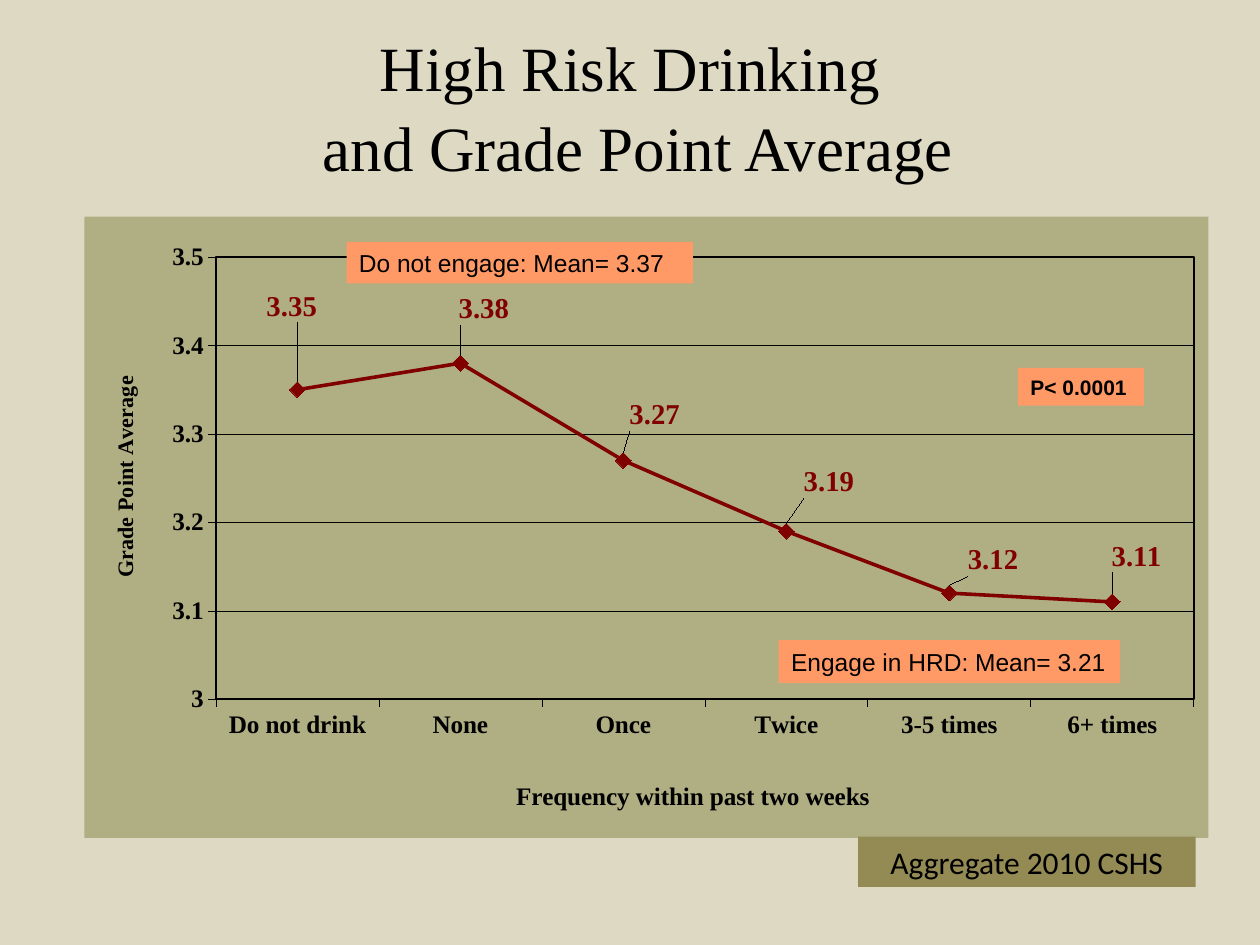
import pptx
import pptx.chart.data
import pptx.dml.color
import pptx.enum.chart
import pptx.enum.text
import pptx.oxml
import pptx.util
from pptx.util import Inches

SERIF = "Times New Roman"
BLACK = "000000"
MAROON = "800000"
ORANGE = "FF9966"
CHART_NS = 'xmlns:c="http://schemas.openxmlformats.org/drawingml/2006/chart"'
DRAWING_NS = 'xmlns:a="http://schemas.openxmlformats.org/drawingml/2006/main"'

# Category, grade point average, label shift as a share of the chart size
POINTS = [
    ("Do not drink", 3.35, (-0.005, -0.087)),
    ("None", 3.38, (0.021, -0.04)),
    ("Once", 3.27, (0.028, -0.026)),
    ("Twice", 3.19, (0.038, -0.032)),
    ("3-5 times", 3.12, (0.039, -0.006)),
    ("6+ times", 3.11, (0.022, -0.026)),
]


def color(value):
    return pptx.dml.color.RGBColor.from_string(value)


def style_font(font, name, size, value=BLACK, bold=False):
    font.name = name
    font.size = pptx.util.Pt(size)
    font.bold = bold
    font.color.rgb = color(value)


def style_fill(fill, value):
    fill.solid()
    fill.fore_color.rgb = color(value)


def style_line(line, value, width):
    line.color.rgb = color(value)
    line.width = pptx.util.Pt(width)


def manual_layout(x, y, width=None, height=None):
    """Return a c:layout element; with a size it places the inner plot area."""
    has_size = width is not None
    target = '<c:layoutTarget val="inner"/>' if has_size else ""
    modes = '<c:xMode val="edge"/><c:yMode val="edge"/>'
    size = f'<c:w val="{width}"/><c:h val="{height}"/>' if has_size else ""
    return pptx.oxml.parse_xml(
        f"<c:layout {CHART_NS}><c:manualLayout>{target}{modes}"
        f'<c:x val="{x}"/><c:y val="{y}"/>{size}</c:manualLayout></c:layout>'
    )


def label_xml(index, shift):
    x, y = shift
    return pptx.oxml.parse_xml(
        f'<c:dLbl {CHART_NS}><c:idx val="{index}"/><c:layout><c:manualLayout>'
        f'<c:x val="{x}"/><c:y val="{y}"/></c:manualLayout></c:layout>'
        '<c:dLblPos val="t"/><c:showLegendKey val="0"/><c:showVal val="1"/>'
        '<c:showCatName val="0"/><c:showSerName val="0"/>'
        '<c:showPercent val="0"/><c:showBubbleSize val="0"/></c:dLbl>'
    )


def add_title(slide, text):
    box = slide.shapes.add_textbox(Inches(0.5), Inches(0.08), Inches(9), Inches(1.5))
    frame = box.text_frame
    frame.word_wrap = True
    frame.vertical_anchor = pptx.enum.text.MSO_ANCHOR.MIDDLE
    frame.text = text
    paragraph = frame.paragraphs[0]
    paragraph.alignment = pptx.enum.text.PP_ALIGN.CENTER
    paragraph.line_spacing = 1.05
    for run in paragraph.runs:
        style_font(run.font, SERIF, 36)


def add_note(slide, text, box, fill=ORANGE, font="Arial", size=14, bold=False,
             wrap=True, alignment=pptx.enum.text.PP_ALIGN.LEFT):
    shape = slide.shapes.add_textbox(*[Inches(length) for length in box])
    style_fill(shape.fill, fill)
    frame = shape.text_frame
    frame.word_wrap = wrap
    frame.vertical_anchor = pptx.enum.text.MSO_ANCHOR.MIDDLE
    frame.text = text
    frame.paragraphs[0].alignment = alignment
    style_font(frame.paragraphs[0].runs[0].font, font, size, bold=bold)


def style_axis(axis, title, title_size, x, y):
    axis.major_tick_mark = pptx.enum.chart.XL_TICK_MARK.OUTSIDE
    axis.minor_tick_mark = pptx.enum.chart.XL_TICK_MARK.NONE
    style_font(axis.tick_labels.font, SERIF, 14.4, bold=True)
    style_line(axis.format.line, BLACK, 0.25)
    frame = axis.axis_title.text_frame
    frame.text = title
    style_font(frame.paragraphs[0].runs[0].font, SERIF, title_size, bold=True)
    title_element = axis.axis_title._element
    for layout in title_element.findall(pptx.oxml.ns.qn("c:layout")):
        title_element.remove(layout)
    title_element.find(pptx.oxml.ns.qn("c:tx")).addnext(manual_layout(x, y))


def style_areas(chart):
    """Fill the chart, frame the plot and fix the plot's place."""
    chart_space = chart._chartSpace
    plot_area = chart_space.chart.plotArea
    for layout in plot_area.findall(pptx.oxml.ns.qn("c:layout")):
        plot_area.remove(layout)
    plot_area.insert(0, manual_layout(0.117, 0.065, 0.87, 0.712))
    plot_area.append(pptx.oxml.parse_xml(
        f"<c:spPr {CHART_NS} {DRAWING_NS}><a:noFill/><a:ln w=\"12700\"><a:solidFill>"
        f'<a:srgbClr val="{BLACK}"/></a:solidFill></a:ln></c:spPr>'
    ))
    chart_space.chart.addnext(pptx.oxml.parse_xml(
        f"<c:spPr {CHART_NS} {DRAWING_NS}><a:solidFill>"
        '<a:srgbClr val="B0AE83"/></a:solidFill><a:ln><a:noFill/></a:ln></c:spPr>'
    ))


def style_series(series):
    series.smooth = False
    style_line(series.format.line, MAROON, 2.05)
    series.marker.style = pptx.enum.chart.XL_MARKER_STYLE.DIAMOND
    series.marker.size = 9
    style_fill(series.marker.format.fill, MAROON)
    style_line(series.marker.format.line, MAROON, 0.75)
    labels = series.data_labels
    labels.show_value = True
    labels.position = pptx.enum.chart.XL_LABEL_POSITION.ABOVE
    style_font(labels.font, SERIF, 16.4, MAROON, bold=True)
    for index, (_, _, shift) in enumerate(POINTS):
        labels._element.insert(index, label_xml(index, shift))


def add_grade_chart(slide):
    data = pptx.chart.data.CategoryChartData()
    data.categories = [category for category, _, _ in POINTS]
    data.add_series("Series 1", [average for _, average, _ in POINTS])
    chart = slide.shapes.add_chart(
        pptx.enum.chart.XL_CHART_TYPE.LINE_MARKERS,
        Inches(0.67), Inches(1.72), Inches(8.92), Inches(4.93), data,
    ).chart
    chart.has_legend = False
    chart.has_title = False
    style_font(chart.font, SERIF, 18.5, bold=True)
    chart.plots[0].vary_by_categories = False
    style_axis(chart.category_axis, "Frequency within past two weeks", 14.4, 0.38, 0.9)
    value_axis = chart.value_axis
    style_axis(value_axis, "Grade Point Average", 12.6, 0.02, 0.25)
    value_axis.minimum_scale = 3
    value_axis.maximum_scale = 3.5
    value_axis.major_unit = 0.1
    value_axis.tick_labels.number_format = "General"
    value_axis.tick_labels.number_format_is_linked = False
    style_line(value_axis.major_gridlines.format.line, BLACK, 0.25)
    style_series(chart.plots[0].series[0])
    style_areas(chart)


def main():
    presentation = pptx.Presentation()
    presentation.slide_width = Inches(10)
    presentation.slide_height = Inches(7.5)
    slide = presentation.slides.add_slide(presentation.slide_layouts[6])
    style_fill(slide.background.fill, "DDD9C3")
    add_title(slide, "High Risk Drinking\v and Grade Point Average")
    add_grade_chart(slide)
    add_note(slide, "Engage in HRD: Mean= 3.21", (6.18, 5.08, 2.71, 0.34), wrap=False)
    add_note(slide, "Do not engage: Mean= 3.37", (2.75, 1.92, 2.75, 0.33))
    add_note(slide, "P< 0.0001", (8.08, 2.92, 1, 0.3), size=12, bold=True)
    add_note(slide, "Aggregate 2010 CSHS", (6.81, 6.64, 2.68, 0.4), fill="948A54",
             font="Calibri", size=18, alignment=pptx.enum.text.PP_ALIGN.CENTER)
    presentation.save("out.pptx")


if __name__ == "__main__":
    main()
